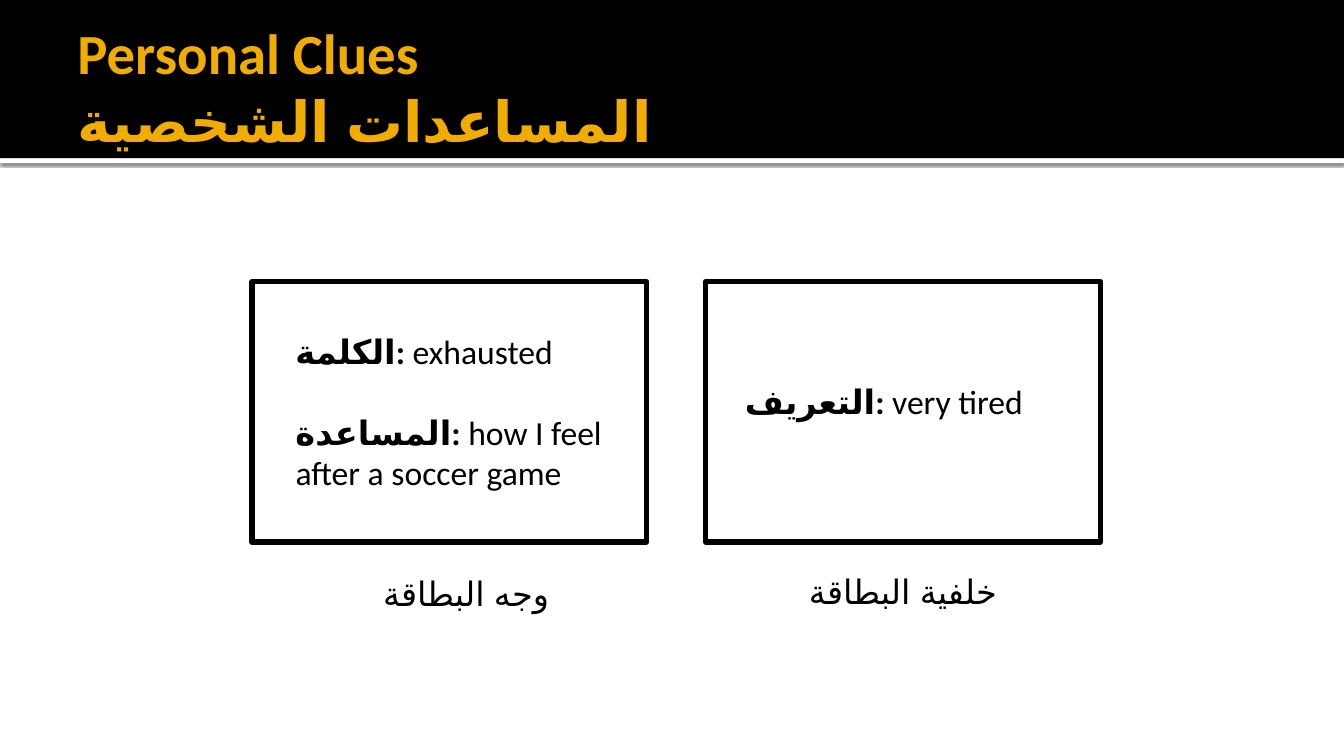
from lxml import etree
from pptx import Presentation
from pptx.dml.color import RGBColor
from pptx.enum.lang import MSO_LANGUAGE_ID
from pptx.enum.shapes import MSO_SHAPE
from pptx.enum.text import MSO_ANCHOR, MSO_AUTO_SIZE, PP_ALIGN
from pptx.oxml import parse_xml
from pptx.util import Pt

RECT = MSO_SHAPE.RECTANGLE
LEFT, CENTER = PP_ALIGN.LEFT, PP_ALIGN.CENTER
MIDDLE = MSO_ANCHOR.MIDDLE
FIT_SHAPE, FIT_NONE = MSO_AUTO_SIZE.SHAPE_TO_FIT_TEXT, MSO_AUTO_SIZE.NONE
ARABIC = MSO_LANGUAGE_ID.ARABIC
NS = "http://schemas.openxmlformats.org/drawingml/2006/main"

# Content
TITLE = ("Personal Clues", "المساعدات الشخصية")
CARDS = [  # label and value lines with their place, caption with its place
    {"lines": [("الكلمة", "exhausted"),
               ("المساعدة", "how I feel after a soccer game")],
     "lines_at": (204, 232.5, 240, 124),
     "caption": "وجه البطاقة", "caption_at": (258, 405.5, 150, 36)},
    {"lines": [("التعريف", "very tired")],
     "lines_at": (525, 268.5, 240, 36),
     "caption": "خلفية البطاقة", "caption_at": (570, 404, 150, 36)},
]

# Look
COLORS = {"black": "000000", "white": "FFFFFF", "gold": "F0AD00"}
SLIDE_W, SLIDE_H = 960, 540
BAND_H, STRIP_H = 113, 3.6
CARD_LEFT, CARD_TOP, CARD_W, CARD_H, CARD_STEP = 180, 201.3, 282, 185.8, 324
TEXT_SIZE, TITLE_SIZE, LINE_GAP = 24, 40.5, 29.3


def color(name):
    return RGBColor.from_string(COLORS[name])


def add_text(paragraph, text, font="Calibri", size=TEXT_SIZE, bold=False, ink="black"):
    run = paragraph.add_run()
    run.text = text
    run.font.name, run.font.size, run.font.bold = font, Pt(size), bold
    run.font.color.rgb = color(ink)
    if font == "Arial":  # Arabic letters take the complex-script font
        run.font.language_id = ARABIC
        etree.SubElement(run.font._element, f"{{{NS}}}cs", typeface=font)


def add_rect(left, top, width, height, fill=None, line=None):
    rect = slide.shapes.add_shape(RECT, Pt(left), Pt(top), Pt(width), Pt(height))
    rect.shadow.inherit = False
    if fill:
        rect.fill.solid()
        rect.fill.fore_color.rgb = color(fill)
    else:
        rect.fill.background()
    if line:
        rect.line.color.rgb = color("black")
        rect.line.width = Pt(line)
    else:
        rect.line.fill.background()
    return rect


def add_frame(place):
    frame = slide.shapes.add_textbox(*map(Pt, place)).text_frame
    frame.word_wrap = True
    frame.auto_size = FIT_SHAPE
    return frame


deck = Presentation()
deck.slide_width, deck.slide_height = Pt(SLIDE_W), Pt(SLIDE_H)
slide = deck.slides.add_slide(deck.slide_layouts[5])

# Header band with a shadowed strip below it
strip = add_rect(0, BAND_H, SLIDE_W, STRIP_H, fill="white")
effects = strip._element.spPr.find(f"{{{NS}}}effectLst")
effects.append(parse_xml(
    f'<a:outerShdw xmlns:a="{NS}" blurRad="{Pt(2.5)}" dist="{Pt(0.8)}" '
    f'dir="5400000" algn="t" rotWithShape="0"><a:srgbClr val="{COLORS["black"]}">'
    '<a:alpha val="60000"/></a:srgbClr></a:outerShdw>'))
add_rect(0, 0, SLIDE_W, BAND_H, fill="black")

# Title, brought in front of the band
title = slide.shapes.title
title.element.getparent().append(title.element)
title.left, title.top, title.width, title.height = map(Pt, (48, 12.2, 864, 98.6))
heading = title.text_frame
heading.word_wrap, heading.auto_size = True, FIT_NONE
heading.vertical_anchor = MIDDLE
heading.margin_left = Pt(7.2)
heading.margin_top = heading.margin_right = heading.margin_bottom = Pt(3.6)
heading_line = heading.paragraphs[0]
heading_line.alignment = LEFT
add_text(heading_line, TITLE[0], size=TITLE_SIZE, bold=True, ink="gold")
heading_line.add_line_break()
add_text(heading_line, TITLE[1], font="Arial", size=TITLE_SIZE, bold=True, ink="gold")

# Cards with their word lines
for index, card in enumerate(CARDS):
    add_rect(CARD_LEFT + index * CARD_STEP, CARD_TOP, CARD_W, CARD_H, line=3.78)
    body = add_frame(card["lines_at"])
    for number, (label, value) in enumerate(card["lines"]):
        entry = body.add_paragraph() if number else body.paragraphs[0]
        entry.alignment = LEFT
        entry.space_before = Pt(LINE_GAP if number else 0)
        add_text(entry, label, font="Arial", bold=True)
        add_text(entry, ": ", bold=True)
        add_text(entry, value)

# Captions under the cards
for card in CARDS:
    caption = add_frame(card["caption_at"]).paragraphs[0]
    caption.alignment = CENTER
    add_text(caption, card["caption"], font="Arial")

deck.save("out.pptx")
